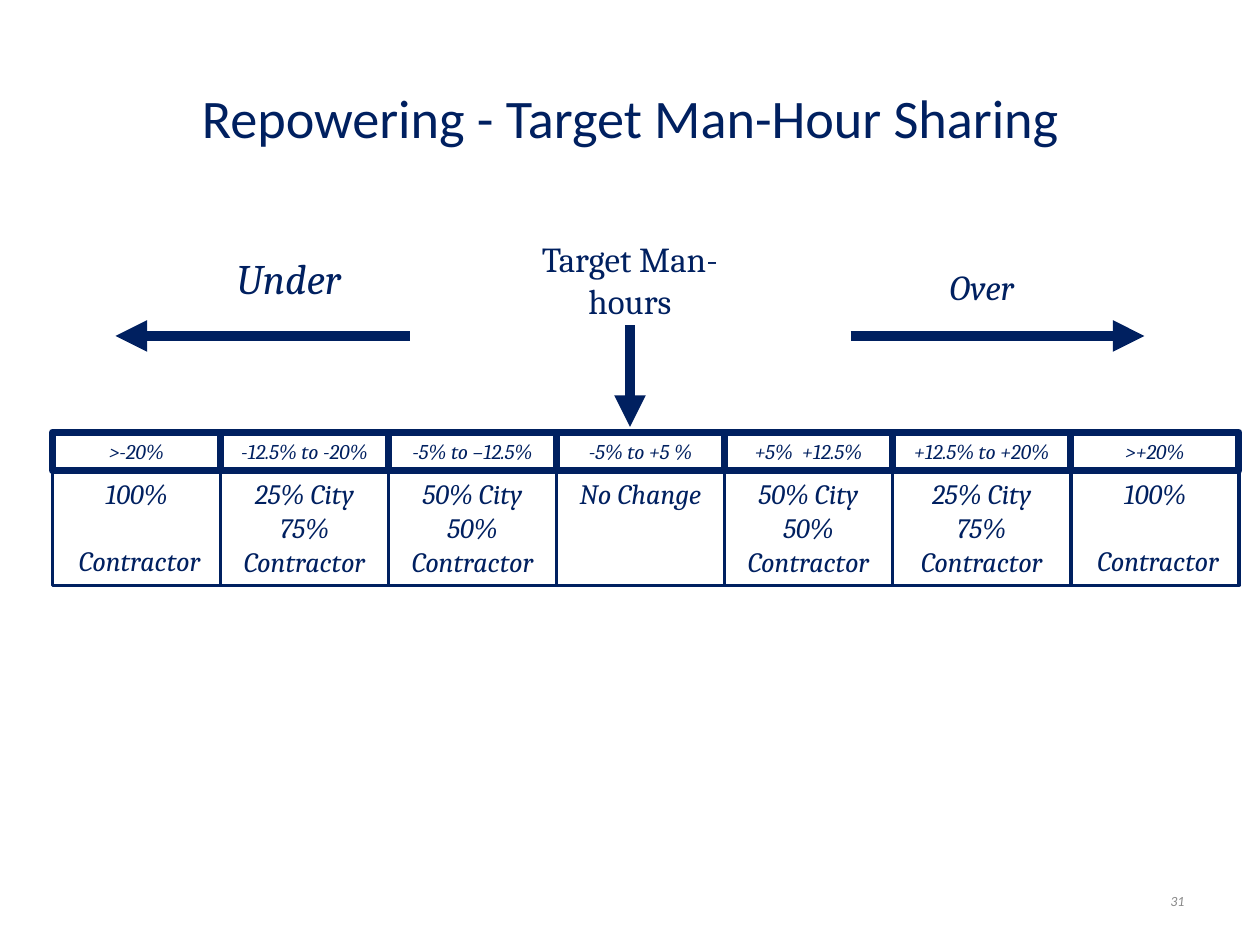
"""Build the slide on sharing of target man-hours."""
import pptx
import pptx.dml.color
import pptx.enum.shapes
import pptx.enum.text
import pptx.oxml
import pptx.oxml.ns
import pptx.util

Pt = pptx.util.Pt
ALIGN = pptx.enum.text.PP_ALIGN
ANCHOR = pptx.enum.text.MSO_ANCHOR
COLORS = {"navy": "002060", "gray": "898989"}
LINE = 19
LEFT, TOP, HEAD, BODY = 30, 247, 22, 65.5
WIDE, EXTRA = 96, 102
BANDS = [
    (">-20%", ["100%", " Contractor"]),
    ("-12.5% to -20%", ["25% City", "75% Contractor"]),
    ("-5% to –12.5%", ["50% City", "50% Contractor"]),
    ("-5% to +5 %", ["No Change"]),
    ("+5%  +12.5%", ["50% City", "50% Contractor"]),
    ("+12.5% to +20%", ["25% City", "75% Contractor"]),
    (">+20%", ["100%", " Contractor"]),
]


def color(name):
    return pptx.dml.color.RGBColor.from_string(COLORS[name])


def write(shape, lines, size, font="Cambria", italic=True, tone="navy",
          align=ALIGN.CENTER, anchor=ANCHOR.TOP, gap=0):
    frame = shape.text_frame
    frame.word_wrap = True
    frame.vertical_anchor = anchor
    for num, line in enumerate(lines):
        para = frame.add_paragraph() if num else frame.paragraphs[0]
        para.alignment = align
        if num:
            para.space_before = Pt(gap)
        run = para.add_run()
        run.text = line
        run.font.name = font
        run.font.size = Pt(size)
        run.font.italic = italic
        run.font.color.rgb = color(tone)


def label(slide, box, text, size, **style):
    shape = slide.shapes.add_textbox(*map(Pt, box))
    write(shape, [text], size, **style)
    return shape


def cell(slide, box, lines, size, weight, gap=0):
    kind = pptx.enum.shapes.MSO_SHAPE.RECTANGLE
    shape = slide.shapes.add_shape(kind, *map(Pt, box))
    shape.shadow.inherit = False
    shape.fill.background()
    shape.line.color.rgb = color("navy")
    shape.line.width = Pt(weight)
    write(shape, lines, size, gap=gap)


def arrow(slide, start, end):
    kind = pptx.enum.shapes.MSO_CONNECTOR.STRAIGHT
    link = slide.shapes.add_connector(kind, *map(Pt, start + end))
    link.line.color.rgb = color("navy")
    link.line.width = Pt(6)
    tip = pptx.oxml.parse_xml(
        f'<a:tailEnd {pptx.oxml.ns.nsdecls("a")} type="triangle"/>')
    link.line._get_or_add_ln().append(tip)
    link._element.spPr.append(pptx.oxml.parse_xml(
        f'<a:effectLst {pptx.oxml.ns.nsdecls("a")}/>'))
    return link


def grid(slide):
    left = LEFT
    for head, body in BANDS:
        width = EXTRA if head == "+12.5% to +20%" else WIDE
        cell(slide, (left, TOP, width, HEAD), [head], 12, 4)
        gap = LINE if body[0] == "100%" else 0
        weight = 2 if head == ">+20%" else 1.5
        cell(slide, (left, TOP + HEAD, width, BODY), body, 16, weight, gap)
        left += width


def main():
    deck = pptx.Presentation()
    deck.slide_width, deck.slide_height = Pt(720), Pt(540)
    slide = deck.slides.add_slide(deck.slide_layouts[6])
    label(slide, (36, 21.5, 648, 90), "Repowering - Target Man-Hour Sharing", 31,
          font="Calibri", italic=False, anchor=ANCHOR.MIDDLE)
    label(slide, (516, 500.5, 168, 28.5), "31", 8, font="Calibri",
          tone="gray", align=ALIGN.RIGHT, anchor=ANCHOR.MIDDLE)
    grid(slide)
    target = label(slide, (291, 132, 138, 54), "Target Man-hours", 20,
                   italic=False)
    label(slide, (96, 141, 138, 36), "Under", 24)
    label(slide, (492, 148, 138, 32), "Over", 20)
    arrow(slide, (234, 192), (66, 192))
    arrow(slide, (486, 192), (654, 192))
    arrow(slide, (360, 186), (360, 244)).begin_connect(target, 2)
    deck.save("out.pptx")


if __name__ == "__main__":
    main()
